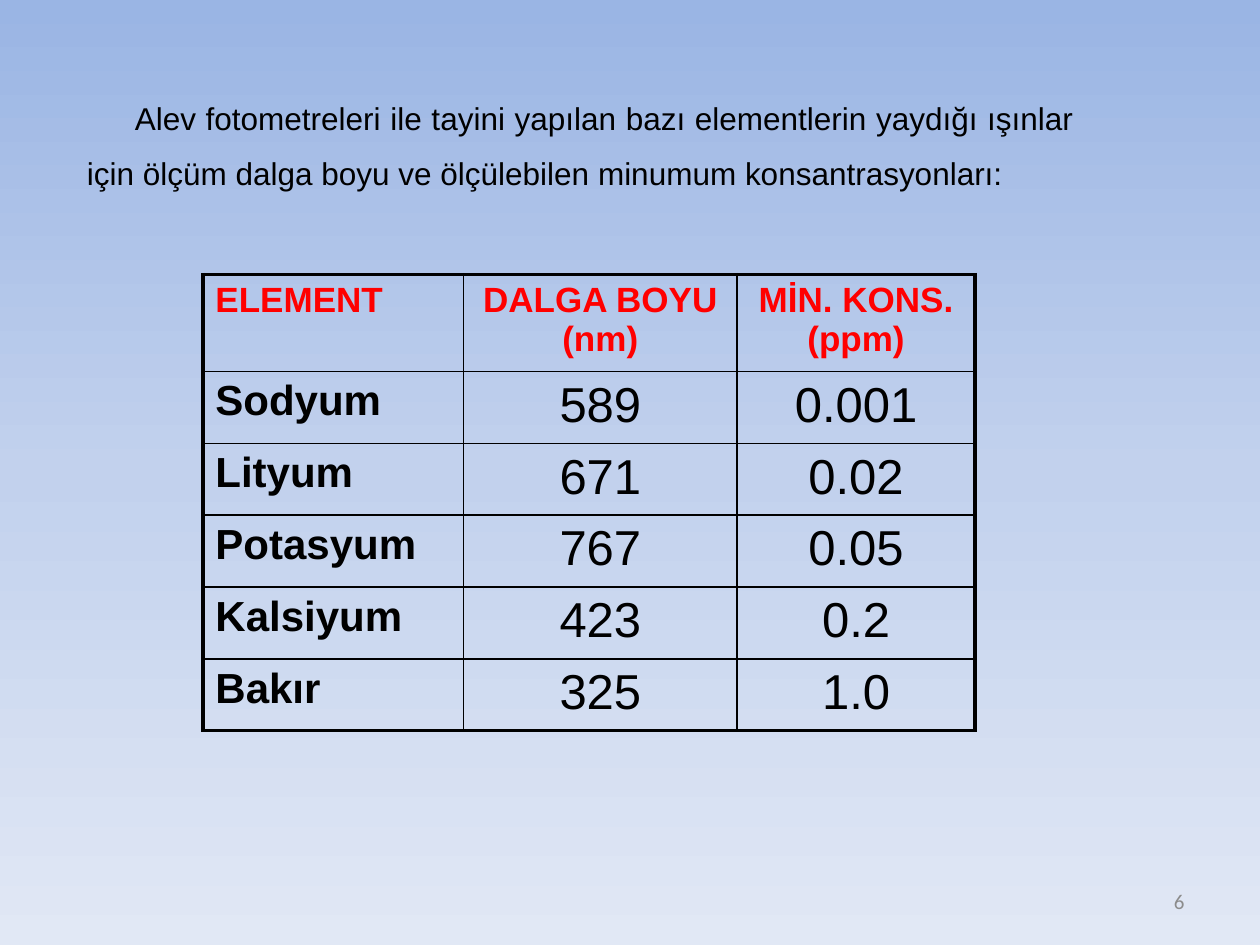
"""Build the slide on flame photometer wavelengths and minimum concentrations."""
import copy
from dataclasses import dataclass

import pptx
import pptx.dml.color
import pptx.enum.text
import pptx.oxml
import pptx.oxml.ns
import pptx.util

RGBColor = pptx.dml.color.RGBColor
Inches = pptx.util.Inches
Pt = pptx.util.Pt
Align = pptx.enum.text.PP_ALIGN
Anchor = pptx.enum.text.MSO_ANCHOR

BLACK = RGBColor(0x00, 0x00, 0x00)
RED = RGBColor(0xFF, 0x00, 0x00)
GREY = RGBColor(0x8C, 0x8C, 0x8C)
SKY = [RGBColor(0x9A, 0xB5, 0xE4), RGBColor(0xC2, 0xD1, 0xED), RGBColor(0xE1, 0xE8, 0xF5)]

INTRO = (
    "Alev fotometreleri ile tayini yapılan bazı elementlerin yaydığı ışınlar "
    "için ölçüm dalga boyu ve ölçülebilen minumum konsantrasyonları:"
)
HEADINGS = ("ELEMENT", "DALGA BOYU (nm)", "MİN. KONS. (ppm)")
COLUMN_WIDTHS = (2.07, 2.17, 1.89)
HEADING_HEIGHT = 0.77
ROW_HEIGHT = 0.57
OUTER_BORDER = 2.25
INNER_BORDER = 1


@dataclass(frozen=True)
class Element:
    name: str
    wavelength: str
    minimum: str


@dataclass(frozen=True)
class TextStyle:
    size: float
    color: RGBColor = BLACK
    bold: bool = False
    font: str = "Arial"
    align: Align = Align.CENTER


ELEMENTS = (
    Element("Sodyum", "589", "0.001"),
    Element("Lityum", "671", "0.02"),
    Element("Potasyum", "767", "0.05"),
    Element("Kalsiyum", "423", "0.2"),
    Element("Bakır", "325", "1.0"),
)


def write(frame, text: str, style: TextStyle) -> None:
    frame.text = text
    paragraph = frame.paragraphs[0]
    paragraph.alignment = style.align
    font = paragraph.runs[0].font
    font.name = style.font
    font.size = Pt(style.size)
    font.bold = style.bold
    font.color.rgb = style.color


def paint_background(slide) -> None:
    fill = slide.background.fill
    fill.gradient()
    fill.gradient_angle = 270
    stop_list = slide.element.find(".//" + pptx.oxml.ns.qn("a:gsLst"))
    stop_list.insert(1, copy.deepcopy(stop_list[0]))
    for index, (stop, color) in enumerate(zip(fill.gradient_stops, SKY)):
        stop.color.rgb = color
        stop.position = index / (len(SKY) - 1)


def add_border(cell, side: str, width: float) -> None:
    cell._tc.get_or_add_tcPr().append(pptx.oxml.parse_xml(
        f'<a:ln{side} {pptx.oxml.ns.nsdecls("a")} w="{int(Pt(width))}">'
        f'<a:solidFill><a:srgbClr val="{BLACK}"/></a:solidFill></a:ln{side}>'
    ))


def cell_style(row: int, column: int) -> TextStyle:
    align = Align.LEFT if column == 0 else Align.CENTER
    if row == 0:
        return TextStyle(20, RED, True, align=align)
    if column == 0:
        return TextStyle(24, bold=True, align=align)
    return TextStyle(28, align=align)


def add_element_table(slide) -> None:
    rows = [HEADINGS] + [(e.name, e.wavelength, e.minimum) for e in ELEMENTS]
    last_row, last_column = len(rows) - 1, len(HEADINGS) - 1
    heights = [HEADING_HEIGHT] + [ROW_HEIGHT] * len(ELEMENTS)
    table = slide.shapes.add_table(
        len(rows), len(HEADINGS), Inches(1.61), Inches(2.18),
        Inches(sum(COLUMN_WIDTHS)), Inches(sum(heights)),
    ).table
    table.first_row = table.horz_banding = False
    for column, width in zip(table.columns, COLUMN_WIDTHS):
        column.width = Inches(width)
    for row, height in zip(table.rows, heights):
        row.height = Inches(height)
    for r, values in enumerate(rows):
        for c, value in enumerate(values):
            cell = table.cell(r, c)
            write(cell.text_frame, value, cell_style(r, c))
            outer_sides = {"L": c == 0, "R": c == last_column, "T": r == 0, "B": r == last_row}
            for side, is_outer in outer_sides.items():
                add_border(cell, side, OUTER_BORDER if is_outer else INNER_BORDER)
            cell.fill.background()


def add_intro(slide) -> None:
    intro = slide.shapes.title
    intro.left, intro.top = Inches(0.59), Inches(0.6)
    intro.width, intro.height = Inches(8.03), Inches(0.9)
    frame = intro.text_frame
    write(frame, INTRO, TextStyle(18, align=Align.JUSTIFY))
    frame.word_wrap = True
    frame.auto_size = pptx.enum.text.MSO_AUTO_SIZE.NONE
    frame.vertical_anchor = Anchor.TOP
    paragraph = frame.paragraphs[0]
    paragraph.line_spacing = 1.45
    paragraph._p.get_or_add_pPr().set("indent", str(Inches(0.38)))


def add_page_number(slide) -> None:
    number = slide.shapes.add_textbox(Inches(7.17), Inches(6.95), Inches(2.33), Inches(0.4))
    frame = number.text_frame
    frame.word_wrap = True
    frame.vertical_anchor = Anchor.MIDDLE
    write(frame, "6", TextStyle(12, GREY, font="Calibri", align=Align.RIGHT))


def main() -> None:
    presentation = pptx.Presentation()
    presentation.slide_width, presentation.slide_height = Inches(10), Inches(7.5)
    slide = presentation.slides.add_slide(presentation.slide_layouts.get_by_name("Title Only"))
    paint_background(slide)
    add_element_table(slide)
    add_intro(slide)
    add_page_number(slide)
    presentation.save("out.pptx")


if __name__ == "__main__":
    main()
